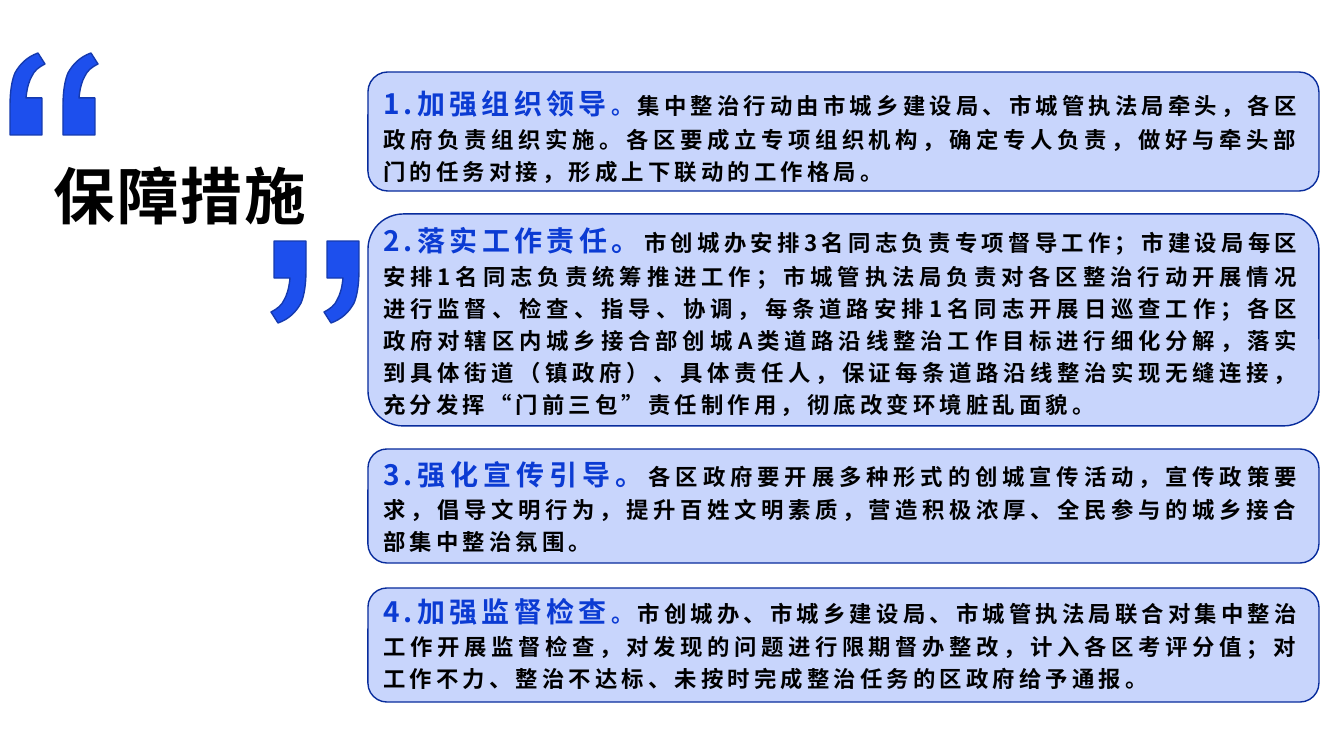
import pptx
import pptx.dml.color
import pptx.enum.shapes
import pptx.enum.text
import pptx.oxml.ns
import pptx.util
from lxml import etree

EMU_PER_PX = 914400 / 100.8
BLUE, BLACK = "0B3BD3", "000000"
CJK = "Noto Sans CJK SC"

CARDS = [(588, 114), (449, 114), (214, 212), (72, 119)]

QUOTE_START = (32, 45)
QUOTE_SEGMENTS = [
    [(32, 82)],
    [(0, 82)],
    [(0, 53)],
    [(0, 38), (2, 27), (5, 20)],
    [(10, 11), (17, 4), (28, 0)],
    [(35, 11)],
    [(29, 14), (24, 18), (22, 23)],
    [(19, 28), (17, 35), (16, 45)],
]

MEASURES = [
    [("1.加强组织领导", 20, BLUE), ("。", 16, BLUE),
     ("集中整治行动由市城乡建设局、市城管执法局牵头，各区政府负责组织实施。"
      "各区要成立专项组织机构，确定专人负责，做好与牵头部门的任务对接，"
      "形成上下联动的工作格局。", 16, BLACK)],
    [("2.落实工作责任。", 20, BLUE),
     ("市创城办安排3名同志负责专项督导工作；市建设局每区安排1名同志负责统筹推进工作；"
      "市城管执法局负责对各区整治行动开展情况进行监督、检查、指导、协调，"
      "每条道路安排1名同志开展日巡查工作；各区政府对辖区内城乡接合部创城A类道路沿线"
      "整治工作目标进行细化分解，落实到具体街道（镇政府）、具体责任人，"
      "保证每条道路沿线整治实现无缝连接，充分发挥“门前三包”责任制作用，"
      "彻底改变环境脏乱面貌。", 16, BLACK)],
    [("3.强化宣传引导。", 20, BLUE),
     ("各区政府要开展多种形式的创城宣传活动，宣传政策要求，倡导文明行为，"
      "提升百姓文明素质，营造积极浓厚、全民参与的城乡接合部集中整治氛围。", 16, BLACK)],
    [("4.加强监督检查", 20, BLUE), ("。", 16, BLUE),
     ("市创城办、市城乡建设局、市城管执法局联合对集中整治工作开展监督检查，"
      "对发现的问题进行限期督办整改，计入各区考评分值；"
      "对工作不力、整治不达标、未按时完成整治任务的区政府给予通报。", 16, BLACK)],
]


def px(length):
    return pptx.util.Emu(round(length * EMU_PER_PX))


def color(hex_string):
    return pptx.dml.color.RGBColor.from_string(hex_string)


class MeasuresSlide:
    """Holds the style and the current slide, and draws each kind of element."""

    def __init__(self, deck):
        self.slide = deck.slides.add_slide(deck.slide_layouts[1])
        self.shapes = self.slide.shapes

    def paint(self, shape, fill, line):
        shape.shadow.inherit = False
        shape.fill.solid()
        shape.fill.fore_color.rgb = color(fill)
        shape.line.color.rgb = color(line)
        shape.line.width = pptx.util.Pt(1)

    def card(self, top, height):
        panel = self.shapes.add_shape(pptx.enum.shapes.MSO_SHAPE.ROUNDED_RECTANGLE,
                                      px(368), px(top), px(951), px(height))
        self.paint(panel, "C8D5FC", "082C9C")

    def quotes(self, left, top, rotation=0):
        qn = pptx.oxml.ns.qn
        marks = [[[(px(x + shift), px(y)) for x, y in points]
                  for points in [[QUOTE_START], *QUOTE_SEGMENTS]] for shift in (0, 53)]
        outline = self.shapes.build_freeform(*marks[0][0][0])
        for index, (start, *segments) in enumerate(marks):
            if index:
                outline.move_to(*start[0])
            outline.add_line_segments([points[-1] for points in segments], close=True)
        pair = outline.convert_to_shape(px(left), px(top))
        pair.rotation = rotation
        self.paint(pair, "1D4FED", "153AAF")
        lines = list(pair.element.iter(qn("a:lnTo")))
        segments = [points for mark in marks for points in mark[1:]]
        for line, points in zip(lines, segments):
            if len(points) == 3:
                bend = etree.Element(qn("a:cubicBezTo"))
                for x, y in points:
                    etree.SubElement(bend, qn("a:pt"), x=str(int(x)), y=str(int(y)))
                line.getparent().replace(line, bend)

    def place(self, holder, left, top, width, height, anchor):
        holder.left, holder.top = px(left), px(top)
        holder.width, holder.height = px(width), px(height)
        holder.element.getparent().append(holder.element)
        frame = holder.text_frame
        frame.word_wrap = True
        frame.auto_size = pptx.enum.text.MSO_AUTO_SIZE.NONE
        frame.vertical_anchor = anchor
        return frame

    def run(self, paragraph, text, size, hex_string, font, spacing):
        piece = paragraph.add_run()
        piece.text = text
        piece.font.size = pptx.util.Pt(size)
        piece.font.bold = True
        piece.font.color.rgb = color(hex_string)
        piece.font.name = font
        properties = piece._r.get_or_add_rPr()
        properties.set("lang", "zh-CN")
        properties.set("spc", str(spacing))
        etree.SubElement(properties, pptx.oxml.ns.qn("a:ea"), typeface=CJK)

    def title(self, text):
        frame = self.place(self.shapes.title, -13, 103, 386, 184,
                           pptx.enum.text.MSO_ANCHOR.MIDDLE)
        heading = frame.paragraphs[0]
        heading.alignment = pptx.enum.text.PP_ALIGN.CENTER
        self.run(heading, text, 44, BLACK, "Arial", 160)

    def body(self, measures):
        frame = self.place(self.slide.placeholders[1], 373, 75, 939, 673,
                           pptx.enum.text.MSO_ANCHOR.TOP)
        for index, pieces in enumerate(measures):
            measure = frame.add_paragraph() if index else frame.paragraphs[0]
            measure.alignment = pptx.enum.text.PP_ALIGN.JUSTIFY
            measure.line_spacing = 1.2
            measure.space_before = pptx.util.Pt(23 if index else 0)
            properties = measure._p.get_or_add_pPr()
            properties.set("marL", "0")
            properties.set("indent", "0")
            etree.SubElement(properties, pptx.oxml.ns.qn("a:buNone"))
            for text, size, hex_string in pieces:
                self.run(measure, text, size, hex_string, CJK, 300)


def main():
    deck = pptx.Presentation()
    deck.slide_width, deck.slide_height = px(1344), px(756)
    page = MeasuresSlide(deck)
    for top, height in CARDS:
        page.card(top, height)
    page.title("保障措施")
    page.quotes(10, 53)
    page.quotes(271, 241, rotation=180)
    page.body(MEASURES)
    deck.save("out.pptx")


if __name__ == "__main__":
    main()
